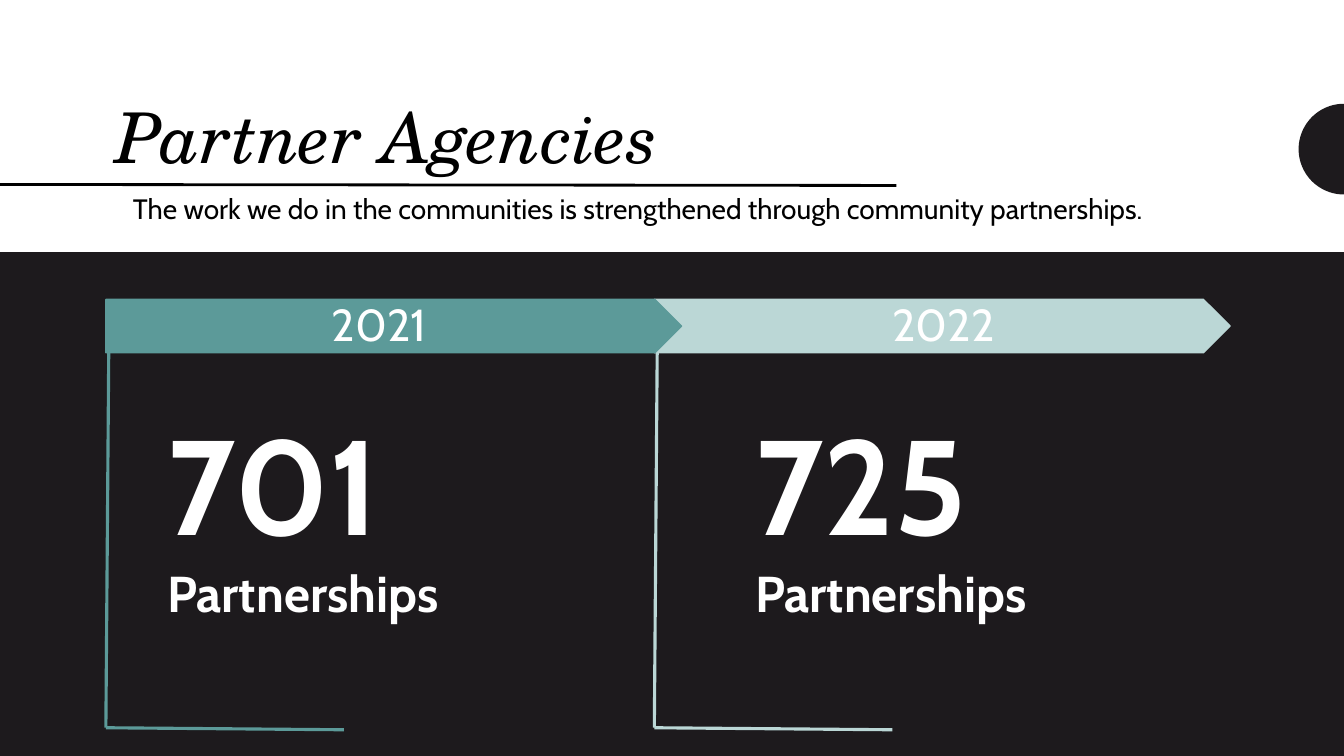
from math import cos, sin, pi
from lxml.etree import SubElement
from pptx import Presentation
from pptx.dml.color import RGBColor
from pptx.enum.shapes import MSO_SHAPE as Shape, MSO_CONNECTOR as Conn
from pptx.enum.text import MSO_ANCHOR as Anchor, PP_ALIGN as Align
from pptx.oxml.ns import qn
from pptx.util import Inches, Pt

# Content
TITLE = "Partner Agencies"
INTRO = ("The work we do in the communities is strengthened "
         "through community partnerships.")
YEARS = [  # year, count, colour, left edge, year left, count left
    ("2021", "701", "teal", 1.05, 3.19, 1.56),
    ("2022", "725", "mint", 6.49, 8.75, 7.39),
]
UNIT = "Partnerships"
HEX = {"dark": "1D1A1D", "white": "FFFFFF", "black": "000000",
       "teal": "5C9A99", "mint": "BBD7D6"}
WIDE, HIGH = 13.33, 7.5
SANS, SERIF = "Cabin", "TeX Gyre Schola"

deck = Presentation()
deck.slide_width, deck.slide_height = Inches(WIDE), Inches(HIGH)
slide = deck.slides.add_slide(deck.slide_layouts[5])
shapes = slide.shapes


def rgb(name):
    return RGBColor.from_string(HEX[name])


def paint(shape, color, edge=None):
    shape.shadow.inherit = False
    shape.fill.solid()
    shape.fill.fore_color.rgb = rgb(color)
    if edge:
        shape.line.color.rgb = rgb(color)
        shape.line.width = Pt(edge)
    else:
        shape.line.fill.background()


def block(kind, box, color, edge=None):
    shape = shapes.add_shape(kind, *map(Inches, box))
    paint(shape, color, edge)


def rule(start, end, color, width):
    line = shapes.add_connector(Conn.STRAIGHT, *map(Inches, start + end))
    line.line.color.rgb = rgb(color)
    line.line.width = Pt(width)
    SubElement(line._element.spPr, qn("a:effectLst"))


def write(par, text, color, **style):
    par.alignment = Align.LEFT
    run = par.add_run()
    run.text = text
    for key, value in style.items():
        setattr(run.font, key, value)
    run.font.color.rgb = rgb(color)


def label(box, lines, color, bold=False):
    frame = shapes.add_textbox(*map(Inches, box)).text_frame
    frame.word_wrap = True
    for i, (text, size) in enumerate(lines):
        par = frame.add_paragraph() if i else frame.paragraphs[0]
        write(par, text, color, name=SANS, size=Pt(size), bold=bold)


# Background and header band
slide.background.fill.solid()
slide.background.fill.fore_color.rgb = rgb("dark")
block(Shape.RECTANGLE, (0, 0, WIDE, 2.5), "white")

# Title, brought in front of the band
title = shapes.title
title.left, title.top, title.width, title.height = map(
    Inches, (1.05, 0.47, 9.92, 1.35))
shapes._spTree.append(title._element)
frame = title.text_frame
frame.word_wrap = True
frame.vertical_anchor = Anchor.BOTTOM
frame.paragraphs[0].line_spacing = 0.9
write(frame.paragraphs[0], TITLE, "black",
      name=SERIF, size=Pt(50), italic=True)
rule((0, 1.83), (8.89, 1.84), "black", 2)

# Half disc on the right edge
MID, RAD, STEPS = 1.48, 0.45, 48
arc = [(Inches(WIDE - RAD * sin(pi * i / STEPS)),
        Inches(MID - RAD * cos(pi * i / STEPS))) for i in range(STEPS + 1)]
path = shapes.build_freeform(*arc[0])
path.add_line_segments(arc[1:], close=True)
paint(path.convert_to_shape(), "dark")

# Year arrows with brackets; the first arrow overlaps the second
for year, count, color, left, year_x, count_x in reversed(YEARS):
    rule((left + 0.03, 3.3), (left, 7.22), color, 2.25)
    rule((left + 2.36, 7.24), (left, 7.22), color, 2.25)
    block(Shape.PENTAGON, (left, 2.97, 5.71, 0.53), color, 1)

# Text on the arrows and below them
for year, count, color, left, year_x, count_x in YEARS:
    label((year_x, 2.89, 4.76, 0.64), [(year, 32)], "white")
    label((count_x, 3.93, 4.2, 2.69), [(count, 96), (UNIT, 36)],
          "white", bold=True)
label((1.22, 1.85, 10.29, 0.44), [(INTRO, 20)], "black")

deck.save("out.pptx")
